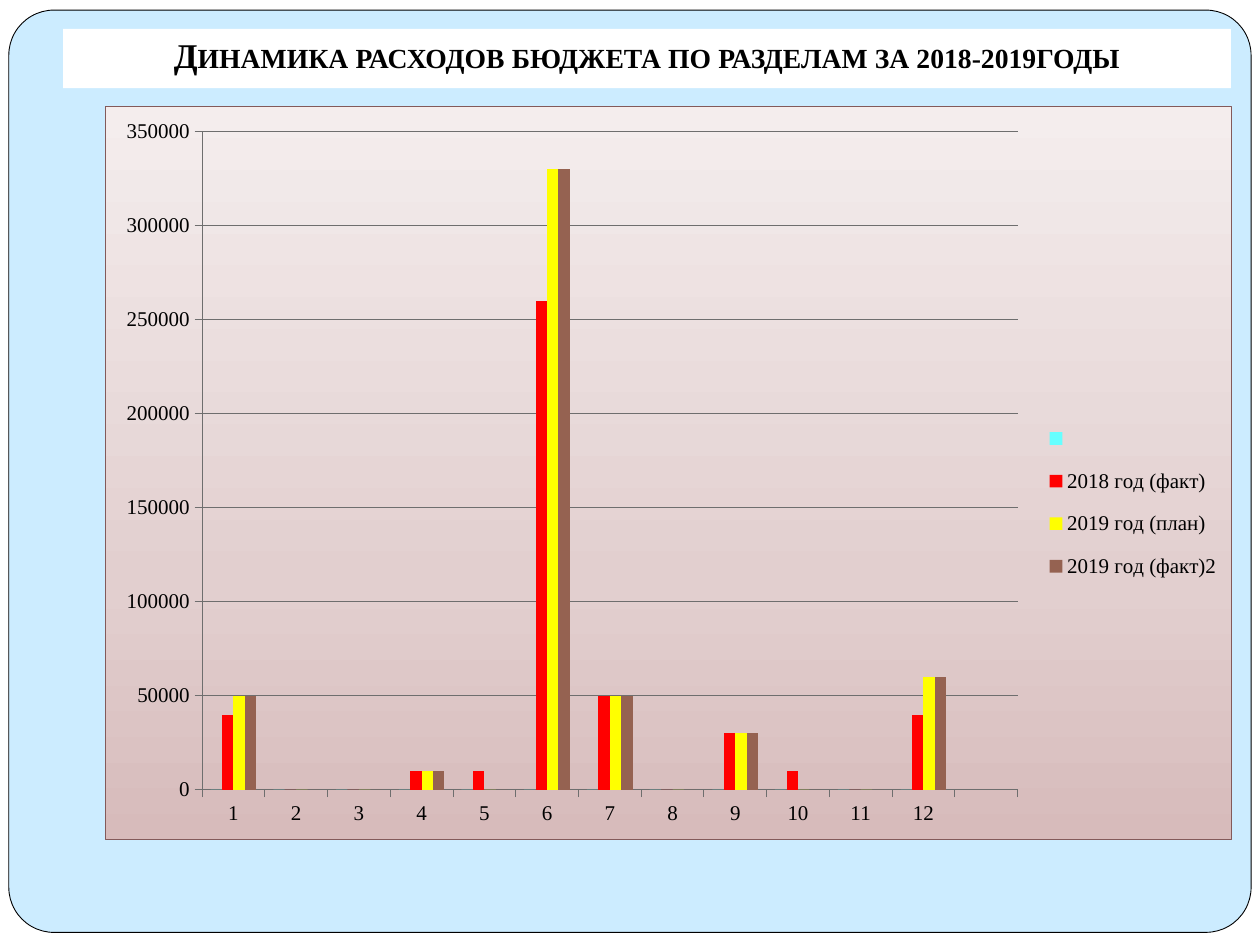
import pptx
import pptx.util
import pptx.chart.data
import pptx.dml.color
import pptx.enum.chart
import pptx.enum.shapes
import pptx.enum.text
import pptx.oxml
import pptx.oxml.ns

Inches = pptx.util.Inches
Pt = pptx.util.Pt
FONT = "Times New Roman"
TITLE = "Динамика расходов бюджета по разделам за 2018-2019годы"
CATEGORIES = [str(number) for number in range(1, 13)] + [" "]
SERIES = [
    (" ", "66FFFF", [0] * 12),
    ("2018 год (факт)", "FF0000",
     [40000, 0, 0, 10000, 10000, 260000, 50000, 0, 30000, 10000, 0, 40000]),
    ("2019 год (план)", "FFFF00",
     [50000, 0, 0, 10000, 0, 330000, 50000, 0, 30000, 0, 0, 60000]),
    ("2019 год (факт)2", "956251",
     [50000, 0, 0, 10000, 0, 330000, 50000, 0, 30000, 0, 0, 60000]),
]
GRADIENT = [(0, "D7BBBB"), (35, "E2CFCF"), (100, "F4EDED")]
PLOT_AREA = {"x": 0.086, "y": 0.034, "w": 0.724, "h": 0.898}
LEGEND_AREA = {"x": 0.83, "y": 0.41, "w": 0.165, "h": 0.26}


def color(value):
    return pptx.dml.color.RGBColor.from_string(value)


def paint(target, value):
    target.fill.solid()
    target.fill.fore_color.rgb = color(value)


def outline(line, value, width):
    line.color.rgb = color(value)
    line.width = Pt(width)


def write(frame, text, size, value, bold=False, small_caps=False):
    paragraph = frame.paragraphs[0]
    paragraph.alignment = pptx.enum.text.PP_ALIGN.CENTER
    run = paragraph.add_run()
    run.text = text
    run.font.name = FONT
    run.font.size = Pt(size)
    run.font.bold = bold
    run.font.color.rgb = color(value)
    if small_caps:
        run.font._element.set("cap", "small")


def parse_xml(tag, content):
    return pptx.oxml.parse_xml(
        f"<{tag} {pptx.oxml.ns.nsdecls('c', 'a')}>{content}</{tag}>")


def layout_xml(area, inner=False):
    target = '<c:layoutTarget val="inner"/>' if inner else ""
    modes = "".join(f'<c:{key}Mode val="edge"/>' for key in "xy")
    sizes = "".join(f'<c:{key} val="{value}"/>' for key, value in area.items())
    return parse_xml("c:layout", f"<c:manualLayout>{target}{modes}{sizes}</c:manualLayout>")


def place(element, area, after=None, inner=False):
    for old in element.findall(pptx.oxml.ns.qn("c:layout")):
        element.remove(old)
    index = 0 if after is None else element.index(element.find(pptx.oxml.ns.qn(after))) + 1
    element.insert(index, layout_xml(area, inner))


def add_background(slide):
    panel = slide.shapes.add_shape(
        pptx.enum.shapes.MSO_SHAPE.ROUNDED_RECTANGLE,
        Inches(0.07), Inches(0.08), Inches(9.86), Inches(7.32))
    panel.adjustments[0] = 0.049
    panel.shadow.inherit = False
    paint(panel, "CCECFF")
    outline(panel.line, "000000", 0.5)
    slide.shapes._spTree.insert(2, panel._element)


def add_title(slide):
    title = slide.shapes.title
    title.left, title.top, title.width, title.height = map(Inches, (0.5, 0.23, 9.27, 0.47))
    paint(title, "FFFFFF")
    frame = title.text_frame
    frame.word_wrap = True
    frame.auto_size = pptx.enum.text.MSO_AUTO_SIZE.NONE
    frame.vertical_anchor = pptx.enum.text.MSO_ANCHOR.BOTTOM
    frame.margin_left = frame.margin_right = frame.margin_bottom = Inches(0.1)
    frame.margin_top = Inches(0.05)
    write(frame, TITLE, size=19.8, value="000000", bold=True, small_caps=True)


def add_budget_chart(slide):
    data = pptx.chart.data.CategoryChartData(number_format="General")
    data.categories = CATEGORIES
    for name, _, values in SERIES:
        data.add_series(name, values + [None])
    chart = slide.shapes.add_chart(
        pptx.enum.chart.XL_CHART_TYPE.COLUMN_CLUSTERED,
        Inches(0.83), Inches(0.84), Inches(8.95), Inches(5.83), data).chart
    chart.has_title = False
    chart.font.name = FONT
    chart.font.size = Pt(12)
    chart.font.color.rgb = color("000000")

    plot = chart.plots[0]
    plot.gap_width = 150
    plot.overlap = 0
    plot.vary_by_categories = False
    for series, (_, value, _) in zip(plot.series, SERIES):
        paint(series.format, value)
        series.invert_if_negative = False

    for axis in (chart.category_axis, chart.value_axis):
        axis.major_tick_mark = pptx.enum.chart.XL_TICK_MARK.OUTSIDE
        axis.minor_tick_mark = pptx.enum.chart.XL_TICK_MARK.NONE
        outline(axis.format.line, "6E6E6E", 0.5)
    chart.value_axis.minimum_scale = 0
    chart.value_axis.maximum_scale = 350000
    chart.value_axis.major_unit = 50000
    chart.value_axis.has_major_gridlines = True
    outline(chart.value_axis.major_gridlines.format.line, "6E6E6E", 0.5)

    chart.has_legend = True
    chart.legend.position = pptx.enum.chart.XL_LEGEND_POSITION.RIGHT
    chart.legend.include_in_layout = False
    place(chart.legend._element, LEGEND_AREA, after="c:legendPos")
    chart_space = chart._chartSpace
    place(chart_space.chart.plotArea, PLOT_AREA, inner=True)

    stops = "".join(f'<a:gs pos="{position * 1000}"><a:srgbClr val="{value}"/></a:gs>'
                    for position, value in GRADIENT)
    chart_space.chart.addnext(parse_xml(
        "c:spPr",
        f'<a:gradFill><a:gsLst>{stops}</a:gsLst><a:lin ang="16200000" scaled="0"/></a:gradFill>'
        f'<a:ln w="{Pt(0.75)}"><a:solidFill><a:srgbClr val="835A5A"/></a:solidFill></a:ln>'))


def main():
    presentation = pptx.Presentation()
    presentation.slide_width, presentation.slide_height = Inches(10), Inches(7.5)
    slide = presentation.slides.add_slide(presentation.slide_layouts[5])
    paint(slide.background, "FFFFFF")
    add_background(slide)
    add_title(slide)
    add_budget_chart(slide)
    presentation.save("out.pptx")


if __name__ == "__main__":
    main()
